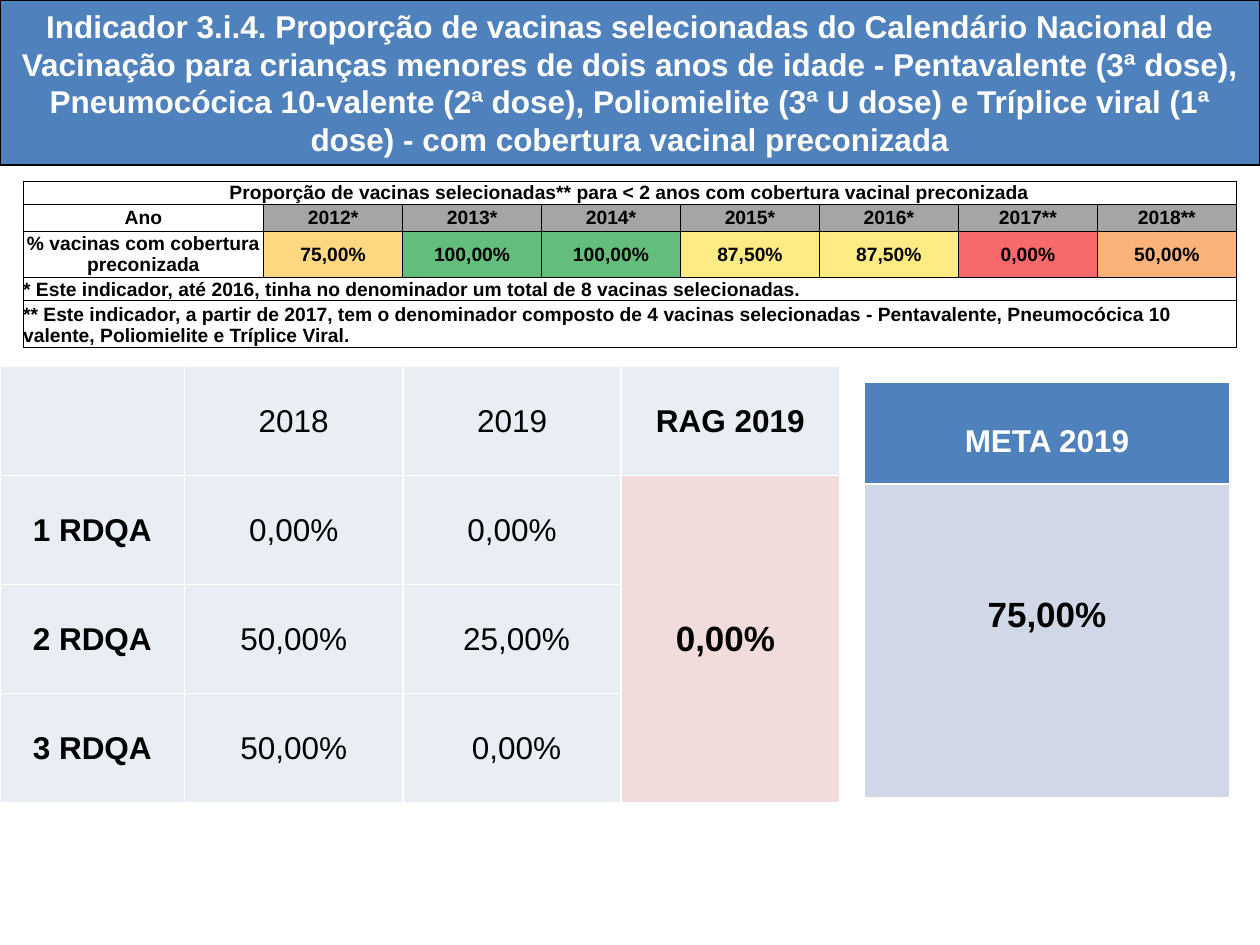
from dataclasses import dataclass

from lxml import etree
from pptx import Presentation
from pptx.dml.color import RGBColor
from pptx.enum.text import MSO_ANCHOR, MSO_AUTO_SIZE, PP_ALIGN
from pptx.oxml.ns import qn
from pptx.slide import Slide
from pptx.table import Table, _Cell
from pptx.text.text import TextFrame
from pptx.util import Inches, Pt

CENTER, LEFT = PP_ALIGN.CENTER, PP_ALIGN.LEFT
MIDDLE, BOTTOM = MSO_ANCHOR.MIDDLE, MSO_ANCHOR.BOTTOM
GROW = MSO_AUTO_SIZE.SHAPE_TO_FIT_TEXT

PAGE_COLUMNS, PAGE_ROWS = 100, 75
UNIT = Inches(0.1)
FONT = "Arial"
BLACK, WHITE, BLUE, GRAY = "000000", "FFFFFF", "4F81BD", "A5A5A5"
PALE, PINK, PALE_BLUE = "E9EDF4", "F2DCDB", "D0D8E8"
ORANGE, GREEN, YELLOW, RED, PEACH = "FED880", "63BE7B", "FFEB84", "F8696B", "FCB379"

TITLE = (
    "Indicador 3.i.4. Proporção de vacinas selecionadas do Calendário Nacional de "
    "Vacinação para crianças menores de dois anos de idade - Pentavalente (3ª dose), "
    "Pneumocócica 10-valente (2ª dose), Poliomielite (3ª U dose) e Tríplice viral "
    "(1ª dose) - com cobertura vacinal preconizada"
)
HISTORY_TITLE = (
    "Proporção de vacinas selecionadas** para < 2 anos com cobertura vacinal preconizada"
)
NOTES = [
    "* Este indicador, até 2016, tinha no denominador um total de 8 vacinas selecionadas.",
    "** Este indicador, a partir de 2017, tem o denominador composto de 4 vacinas "
    "selecionadas - Pentavalente, Pneumocócica 10 valente, Poliomielite e Tríplice Viral.",
]


@dataclass
class Grid:
    left: float
    top: float
    columns: list[float]
    rows: list[float]
    border: str
    border_width: float


@dataclass
class Year:
    label: str
    coverage: str
    fill: str


YEARS = [
    Year("2012*", "75,00%", ORANGE),
    Year("2013*", "100,00%", GREEN),
    Year("2014*", "100,00%", GREEN),
    Year("2015*", "87,50%", YELLOW),
    Year("2016*", "87,50%", YELLOW),
    Year("2017**", "0,00%", RED),
    Year("2018**", "50,00%", PEACH),
]
REPORTS = [
    ["", "2018", "2019", "RAG 2019"],
    ["1 RDQA", "0,00%", "0,00%"],
    ["2 RDQA", "50,00%", " 25,00%"],
    ["3 RDQA", "50,00%", " 0,00%"],
]

HISTORY_GRID = Grid(1.83, 14.4, [19.1] + [11.03] * 7, [1.85, 2.1, 3.65, 1.85, 3.65], BLACK, 0.5)
REPORT_GRID = Grid(0, 29.1, [14.65] + [17.33] * 3, [8.65] * 4, WHITE, 1)
GOAL_GRID = Grid(68.6, 30.35, [29], [8.05, 24.9], WHITE, 1)


def color(value: str) -> RGBColor:
    return RGBColor.from_string(value)


def units(value: float) -> int:
    return round(value * UNIT)


def write(frame: TextFrame, text: str, *, size: float, bold: bool = True,
          ink: str = BLACK, align: PP_ALIGN = CENTER) -> None:
    para = frame.paragraphs[0]
    para.alignment = align
    para.font.size = Pt(size)
    if not text:
        return
    span = para.add_run()
    span.text = text
    span.font.name = FONT
    span.font.size = Pt(size)
    span.font.bold = bold
    span.font.color.rgb = color(ink)


def draw_borders(cell: _Cell, ink: str, width: float) -> None:
    properties = cell._tc.get_or_add_tcPr()
    for side in ("lnL", "lnR", "lnT", "lnB"):
        line = etree.SubElement(properties, qn(f"a:{side}"), w=str(Pt(width)))
        fill = etree.SubElement(line, qn("a:solidFill"))
        etree.SubElement(fill, qn("a:srgbClr"), val=ink)


def add_grid(page: Slide, grid: Grid) -> Table:
    table = page.shapes.add_table(
        len(grid.rows), len(grid.columns), units(grid.left), units(grid.top),
        units(sum(grid.columns)), units(sum(grid.rows)),
    ).table
    table.first_row = table.horz_banding = False
    for column, width in zip(table.columns, grid.columns):
        column.width = units(width)
    for row, height in zip(table.rows, grid.rows):
        row.height = units(height)
    for cell in table.iter_cells():
        cell.margin_left = cell.margin_right = cell.margin_top = cell.margin_bottom = 0
        draw_borders(cell, grid.border, grid.border_width)
        cell.fill.background()
    return table


def fill_cell(cell: _Cell, text: str, *, fill: str | None = None,
              anchor: MSO_ANCHOR = MIDDLE, **text_format) -> None:
    cell.vertical_anchor = anchor
    if fill:
        cell.fill.solid()
        cell.fill.fore_color.rgb = color(fill)
    write(cell.text_frame, text, **text_format)


def add_title(page: Slide) -> None:
    title = page.shapes.title
    title.left, title.top = 0, 0
    title.width, title.height = units(PAGE_COLUMNS), units(13.1)
    title.fill.solid()
    title.fill.fore_color.rgb = color(BLUE)
    title.line.color.rgb = color(BLACK)
    title.line.width = Pt(0.75)
    title.text_frame.word_wrap = True
    title.text_frame.auto_size = GROW
    write(title.text_frame, TITLE, size=18, ink=WHITE)


def add_reports(page: Slide) -> None:
    table = add_grid(page, REPORT_GRID)
    for row, texts in enumerate(REPORTS):
        for column, text in enumerate(texts):
            fill_cell(table.cell(row, column), text, fill=PALE, size=18,
                      bold=column in (0, 3))
    table.cell(1, 3).merge(table.cell(3, 3))
    fill_cell(table.cell(1, 3), "0,00% ", fill=PINK, size=20)


def add_goal(page: Slide) -> None:
    table = add_grid(page, GOAL_GRID)
    heading, value = table.cell(0, 0), table.cell(1, 0)
    fill_cell(heading, "META 2019", fill=BLUE, size=18, ink=WHITE)
    heading.margin_top = units(1.3)
    fill_cell(value, "75,00%", fill=PALE_BLUE, size=20)
    value.margin_bottom = units(4)


def add_history(page: Slide) -> None:
    table = add_grid(page, HISTORY_GRID)
    last = len(HISTORY_GRID.columns) - 1
    for row in (0, 3, 4):
        table.cell(row, 0).merge(table.cell(row, last))
    fill_cell(table.cell(0, 0), HISTORY_TITLE, size=11)
    fill_cell(table.cell(1, 0), "Ano", size=11)
    fill_cell(table.cell(2, 0), "% vacinas com cobertura preconizada", size=11)
    for column, year in enumerate(YEARS, start=1):
        fill_cell(table.cell(1, column), year.label, fill=GRAY, size=11)
        fill_cell(table.cell(2, column), year.coverage, fill=year.fill, size=11)
    for row, note in enumerate(NOTES, start=3):
        fill_cell(table.cell(row, 0), note, anchor=BOTTOM, size=11, align=LEFT)


def main() -> None:
    deck = Presentation()
    deck.slide_width, deck.slide_height = units(PAGE_COLUMNS), units(PAGE_ROWS)
    page = deck.slides.add_slide(deck.slide_layouts.get_by_name("Title Only"))
    add_title(page)
    add_reports(page)
    add_goal(page)
    add_history(page)
    deck.save("out.pptx")


if __name__ == "__main__":
    main()
